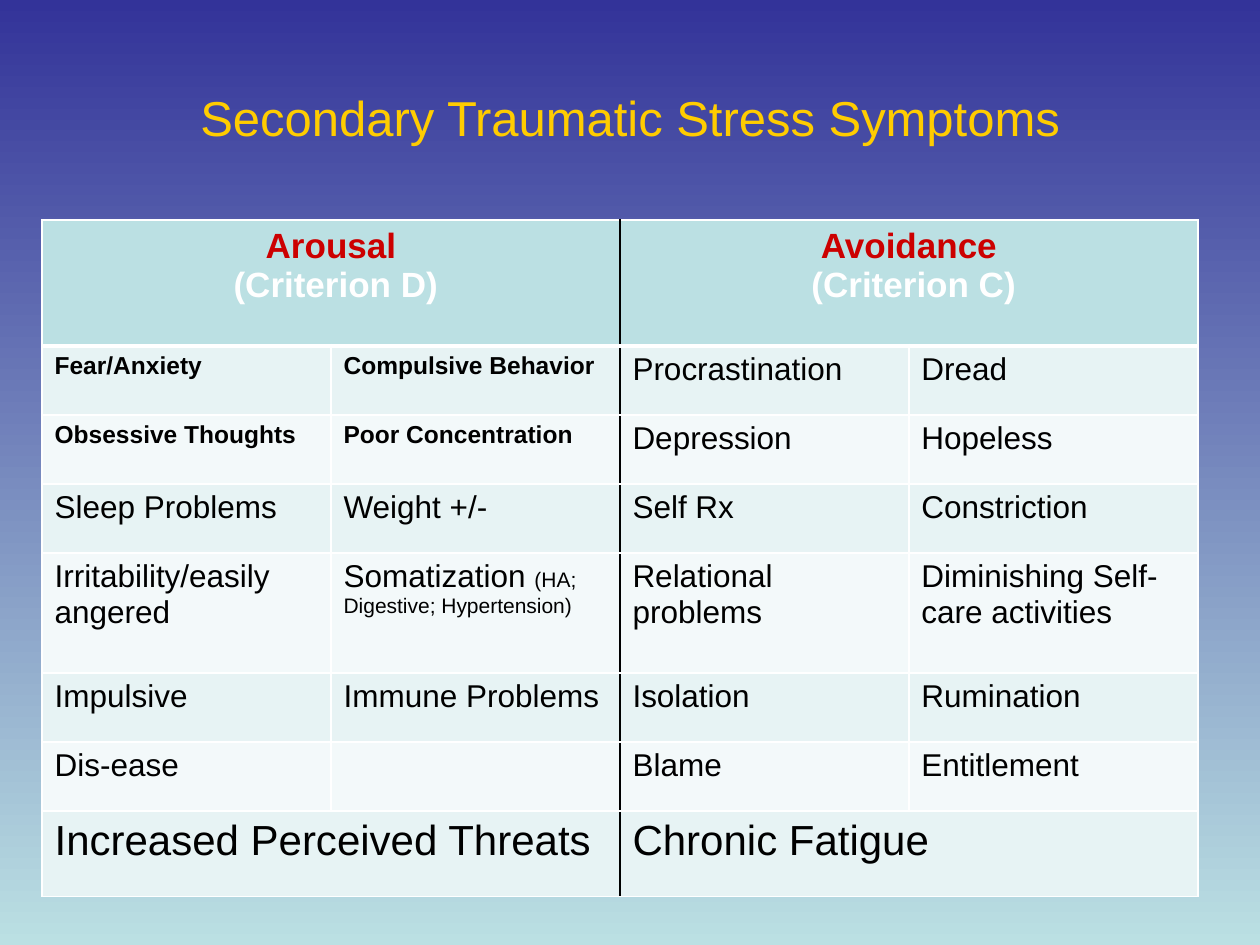
import pptx
import pptx.util
import pptx.dml.color
import pptx.enum.text
import lxml.etree
from dataclasses import dataclass
from pptx.oxml.ns import qn


@dataclass(frozen=True)
class Theme:
    font: str = "Arial"
    sky_top: str = "333399"
    sky_bottom: str = "BBE0E3"
    title: str = "FFCC00"
    heading: str = "CC0000"
    light: str = "FFFFFF"
    ink: str = "000000"
    header_fill: str = "BBE0E3"
    bands: tuple = ("E7F3F4", "F3F9FA")
    title_size: int = 28
    heading_size: int = 20
    body_size: int = 18
    emphasis_size: int = 14
    detail_size: int = 12
    summary_size: int = 24
    rule: int = 1
    header_rule: int = 3


THEME = Theme()
TITLE = "Secondary Traumatic Stress Symptoms"
CRITERIA = [("Arousal", " (Criterion D)"), ("Avoidance", " (Criterion C)")]
SYMPTOMS = [
    ("Fear/Anxiety", "Compulsive Behavior", "Procrastination", "Dread"),
    ("Obsessive Thoughts", "Poor Concentration", "Depression", "Hopeless"),
    ("Sleep Problems", "Weight +/-", "Self Rx", "Constriction"),
    ("Irritability/easily angered", "Somatization ", "Relational problems",
     "Diminishing Self-care activities"),
    ("Impulsive", "Immune Problems", "Isolation", "Rumination"),
    ("Dis-ease", "", "Blame", "Entitlement"),
]
EMPHASIZED = {"Fear/Anxiety", "Compulsive Behavior", "Obsessive Thoughts", "Poor Concentration"}
DETAILS = {"Somatization ": "(HA; Digestive; Hypertension)"}
SUMMARIES = ["Increased Perceived Threats", "Chronic Fatigue"]

SLIDE_SIZE = (1260, 945)
TITLE_BOX = (63, 38, 1134, 157)
TABLE_ORIGIN = (42, 220)
COLUMN_WIDTH = 289
ROW_HEIGHTS = [126, 69, 69, 69, 120, 69, 69, 86]
COLUMNS = 4
LAST_ROW = len(ROW_HEIGHTS) - 1


def px(length):
    return pptx.util.Emu(round(length * 914400 / 126))


def rgb(value):
    return pptx.dml.color.RGBColor.from_string(value)


def style(run, size, color, bold=False):
    run.font.name = THEME.font
    run.font.size = pptx.util.Pt(size)
    run.font.bold = bold
    run.font.color.rgb = rgb(color)


def add_borders(cell, row, first, last):
    edges = [
        ("a:lnL", THEME.ink if first == 2 else THEME.light, THEME.rule),
        ("a:lnR", THEME.ink if last == 1 else THEME.light, THEME.rule),
        ("a:lnT", THEME.light, THEME.header_rule if row == 1 else THEME.rule),
        ("a:lnB", THEME.light, THEME.header_rule if row == 0 else THEME.rule),
    ]
    properties = cell._tc.get_or_add_tcPr()
    for tag, color, width in edges:
        line = lxml.etree.SubElement(properties, qn(tag), w=str(pptx.util.Pt(width)))
        solid = lxml.etree.SubElement(line, qn("a:solidFill"))
        lxml.etree.SubElement(solid, qn("a:srgbClr"), val=color)


def paint_background(slide):
    sky = slide.background.fill
    sky.gradient()
    sky.gradient_angle = 270
    for stop, color, position in zip(sky.gradient_stops, (THEME.sky_top, THEME.sky_bottom), (0, 1)):
        stop.color.rgb = rgb(color)
        stop.position = position


def add_title(slide):
    title = slide.shapes.title
    title.left, title.top, title.width, title.height = map(px, TITLE_BOX)
    title.text_frame.text = TITLE
    title.text_frame.vertical_anchor = pptx.enum.text.MSO_ANCHOR.MIDDLE
    heading = title.text_frame.paragraphs[0]
    heading.alignment = pptx.enum.text.PP_ALIGN.CENTER
    style(heading.runs[0], THEME.title_size, THEME.title)


def fill_criterion(cell, lines):
    cell.text_frame.text = "\n".join(lines)
    for paragraph, color in zip(cell.text_frame.paragraphs, (THEME.heading, THEME.light)):
        paragraph.alignment = pptx.enum.text.PP_ALIGN.CENTER
        style(paragraph.runs[0], THEME.heading_size, color, True)


def fill_symptom(cell, symptom):
    cell.text_frame.text = symptom
    paragraph = cell.text_frame.paragraphs[0]
    emphasized = symptom in EMPHASIZED
    size = THEME.emphasis_size if emphasized else THEME.body_size
    for run in paragraph.runs:
        style(run, size, THEME.ink, emphasized)
    if symptom in DETAILS:
        detail = paragraph.add_run()
        detail.text = DETAILS[symptom]
        style(detail, THEME.detail_size, THEME.ink)


def add_symptom_table(slide):
    frame = slide.shapes.add_table(
        len(ROW_HEIGHTS), COLUMNS, *map(px, TABLE_ORIGIN),
        px(COLUMN_WIDTH * COLUMNS), px(sum(ROW_HEIGHTS)))
    table = frame.table
    table.horz_banding = False
    for column in table.columns:
        column.width = px(COLUMN_WIDTH)
    for row, height in zip(table.rows, ROW_HEIGHTS):
        row.height = px(height)

    for row in (0, LAST_ROW):
        for first in (0, 2):
            table.cell(row, first).merge(table.cell(row, first + 1))
    for row in range(len(ROW_HEIGHTS)):
        fill = THEME.bands[(row - 1) % 2] if row else THEME.header_fill
        for column in range(COLUMNS):
            cell = table.cell(row, column)
            add_borders(cell, row, column, column + cell.is_merge_origin)
            cell.fill.solid()
            cell.fill.fore_color.rgb = rgb(fill)

    for half, (criterion, summary) in enumerate(zip(CRITERIA, SUMMARIES)):
        fill_criterion(table.cell(0, half * 2), criterion)
        summary_cell = table.cell(LAST_ROW, half * 2)
        summary_cell.text_frame.text = summary
        style(summary_cell.text_frame.paragraphs[0].runs[0], THEME.summary_size, THEME.ink)
    for row, symptoms in enumerate(SYMPTOMS, start=1):
        for column, symptom in enumerate(symptoms):
            fill_symptom(table.cell(row, column), symptom)


def main():
    deck = pptx.Presentation()
    deck.slide_width, deck.slide_height = map(px, SLIDE_SIZE)
    slide = deck.slides.add_slide(deck.slide_layouts[5])
    paint_background(slide)
    add_title(slide)
    add_symptom_table(slide)
    deck.save("out.pptx")


if __name__ == "__main__":
    main()
